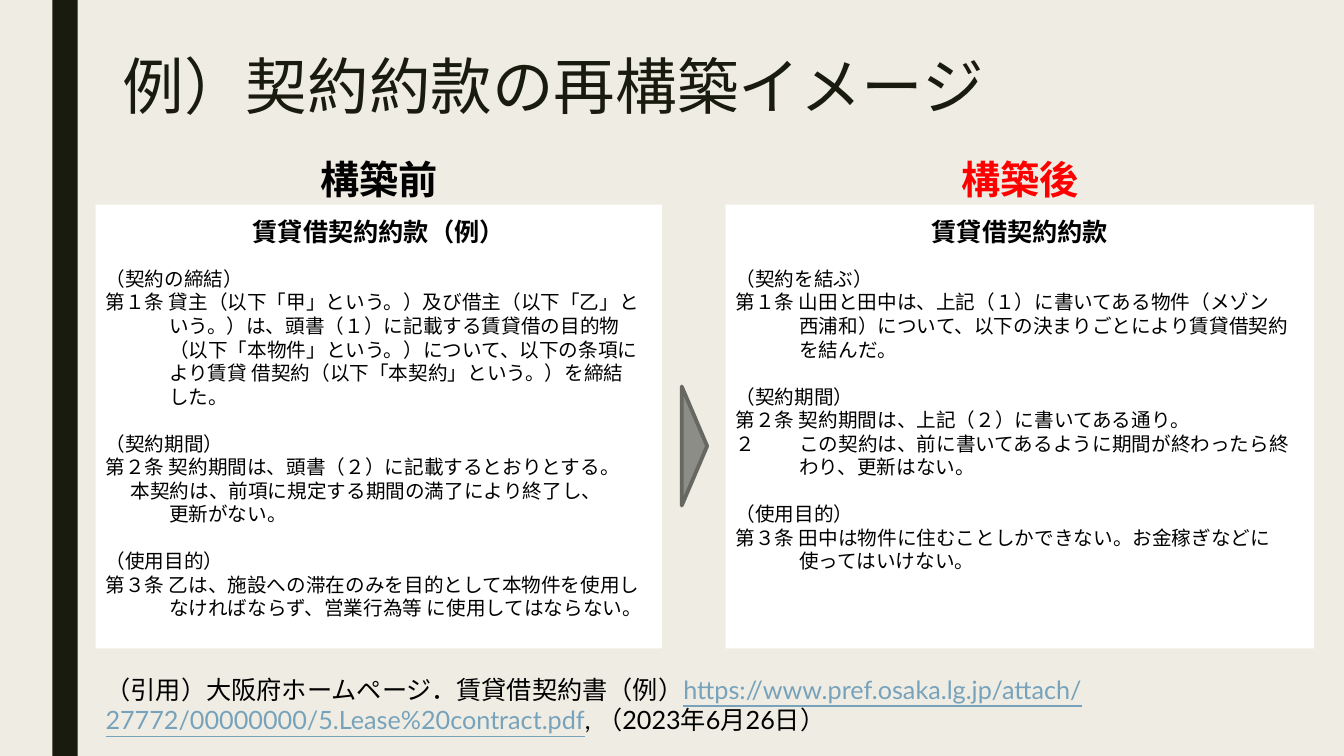
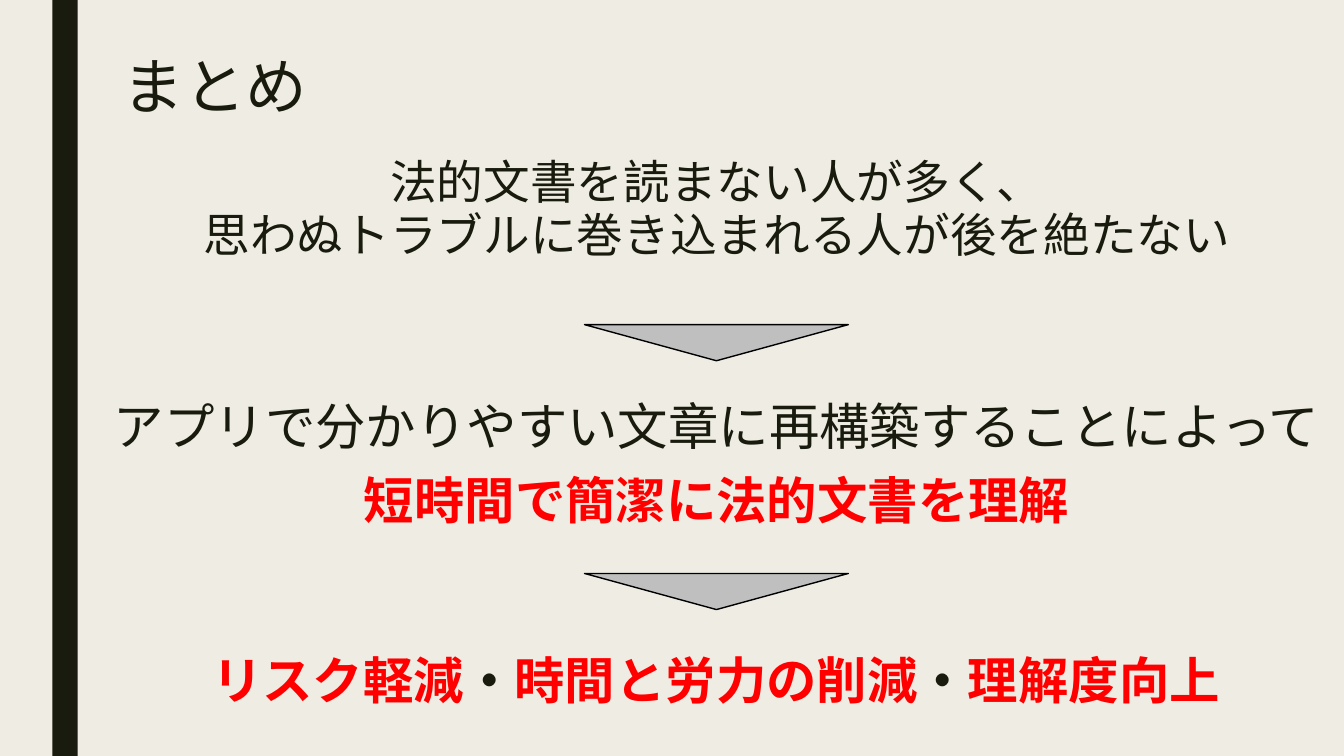
from lxml.etree import SubElement
from pptx import Presentation
from pptx.dml.color import RGBColor
from pptx.enum.shapes import MSO_SHAPE
from pptx.enum.text import MSO_ANCHOR, MSO_AUTO_SIZE, PP_ALIGN
from pptx.oxml.ns import qn
from pptx.util import Cm, Pt

COLOURS = {
    "paper": "EFEDE3", "ink": "191B0E", "black": "000000", "white": "FFFFFF",
    "red": "FF0000", "link": "77A2BB", "grey": "BFBFBF",
    "arrow": "8C8D86", "arrow_edge": "686863",
}
LATO, NOTO = "Lato", "Noto Sans CJK JP"

# Clause kinds: (left margin, first-line indent) in cm
INDENTS = {"heading": (0, 0), "article": (1.6, -1.6), "second": (1.6, -0.97)}

# Each panel: left and width in cm, label, label colour, title, sections
PANELS = [
    (2.41, 14.27, "構築前", "black", "賃貸借契約約款（例）", [
        [("heading", "（契約の締結）"),
         ("article", "第１条 貸主（以下「甲」という。）及び借主（以下「乙」と\n"
                     "いう。）は、頭書（１）に記載する賃貸借の目的物\n"
                     "（以下「本物件」という。）について、以下の条項に\n"
                     "より賃貸 借契約（以下「本契約」という。）を締結\n"
                     "した。")],
        [("heading", "（契約期間）"),
         ("article", "第２条 契約期間は、頭書（２）に記載するとおりとする。"),
         ("second", "本契約は、前項に規定する期間の満了により終了し、\n更新がない。")],
        [("heading", "（使用目的）"),
         ("article", "第３条 乙は、施設への滞在のみを目的として本物件を使用し\n"
                     "なければならず、営業行為等 に使用してはならない。")],
    ]),
    (18.29, 14.83, "構築後", "red", "賃貸借契約約款", [
        [("heading", "（契約を結ぶ）"),
         ("article", "第１条 山田と田中は、上記（１）に書いてある物件（メゾン\n"
                     "西浦和）について、以下の決まりごとにより賃貸借契約\n"
                     "を結んだ。")],
        [("heading", "（契約期間）"),
         ("article", "第２条 契約期間は、上記（２）に書いてある通り。"),
         ("article", "２\tこの契約は、前に書いてあるように期間が終わったら終\n"
                     "わり、更新はない。")],
        [("heading", "（使用目的）"),
         ("article", "第３条 田中は物件に住むことしかできない。お金稼ぎなどに\n"
                     "使ってはいけない。")],
    ]),
]
LABEL_LEFTS = [7.29, 23.44]
CITATION = [
    ("（引用）大阪府ホームページ．賃貸借契約書（例）", "black"),
    ("https://www.pref.osaka.lg.jp/attach/27772/00000000/5.Lease%20contract.pdf", "link"),
    (", （2023年6月26日）", "black"),
]
PROBLEM = "法的文書を読まない人が多く、\n思わぬトラブルに巻き込まれる人が後を絶たない"
SOLUTION = [("アプリで分かりやすい文章に再構築することによって", "ink", False),
            ("短時間で簡潔に法的文書を理解", "red", True)]
BENEFITS = ["リスク軽減", "時間と労力の削減", "理解度向上"]
DOWN_ARROW_TOPS = [8.18, 14.45]


def rgb(name):
    return RGBColor.from_string(COLOURS[name])


def style(para, size, colour, bold=False, font=LATO):
    """Format every run, for Latin and East Asian text alike."""
    for span in para.runs:
        span.font.size, span.font.bold, span.font.name = Pt(size), bold, font
        span.font.color.rgb = rgb(colour)
        SubElement(span.font._element, qn("a:ea"), typeface=font)


def place(shape, left, top, width, height):
    shape.left, shape.top = Cm(left), Cm(top)
    shape.width, shape.height = Cm(width), Cm(height)


def set_indent(para, margin, first_line):
    properties = para._p.get_or_add_pPr()
    properties.set("marL", str(Cm(margin)))
    properties.set("indent", str(Cm(first_line)))


def add_text(slide, left, top, width, height):
    frame = slide.shapes.add_textbox(Cm(left), Cm(top), Cm(width), Cm(height)).text_frame
    frame.word_wrap = True
    return frame


def add_figure(slide, kind, left, top, width, height, fill, line=None, weight=1, rotation=0):
    shape = slide.shapes.add_shape(kind, Cm(left), Cm(top), Cm(width), Cm(height))
    shape.shadow.inherit = False
    shape.rotation = rotation
    shape.fill.solid()
    shape.fill.fore_color.rgb = rgb(fill)
    if line:
        shape.line.color.rgb, shape.line.width = rgb(line), Pt(weight)
    else:
        shape.line.fill.background()
    return shape


def add_page(deck, layout_index, title):
    page = deck.slides.add_slide(deck.slide_layouts[layout_index])
    heading = page.shapes.title
    place(heading, 2.84, 1.3, 26.67, 2.06)
    frame = heading.text_frame
    frame.text = title
    frame.vertical_anchor, frame.auto_size = MSO_ANCHOR.TOP, MSO_AUTO_SIZE.NONE
    para = frame.paragraphs[0]
    para.alignment, para.line_spacing = PP_ALIGN.LEFT, 0.89
    style(para, 44, "ink")
    return page


def set_master(deck, page):
    """Give the slide master the paper background and the dark side band."""
    master = deck.slide_master
    master.background.fill.solid()
    master.background.fill.fore_color.rgb = rgb("paper")
    band = add_figure(page, MSO_SHAPE.RECTANGLE, 1.32, 0, 0.64, 19.05, "ink")
    master.shapes.element.insert(2, band._element)


def add_clauses(frame, title, sections):
    para = frame.paragraphs[0]
    para.text, para.alignment, para.line_spacing = title, PP_ALIGN.CENTER, Pt(21.6)
    style(para, 18, "black", True, NOTO)
    for number, section in enumerate(sections):
        for kind, text in section:
            para = frame.add_paragraph()
            para.text, para.line_spacing = text, Pt(16.8)
            set_indent(para, *INDENTS[kind])
            if kind == "heading":
                para.space_before = Pt(16.8 if number else 14.4)
            style(para, 14, "black", font=NOTO)


def style_statement(para, size, colour, bold=False):
    para.alignment, para.line_spacing = PP_ALIGN.CENTER, 0.94
    para.space_before, para.space_after = Pt(10), Pt(2)
    style(para, size, colour, bold)


def add_spans(para, parts, size, bold=False):
    for text, colour in parts:
        span = para.add_run()
        span.text = text
        span.font.underline = colour == "link"
    style(para, size, "black", bold)
    for span, (_, colour) in zip(para.runs, parts):
        span.font.color.rgb = rgb(colour)


def build_comparison(page):
    for (left, width, label, colour, title, sections), label_left in zip(PANELS, LABEL_LEFTS):
        add_figure(page, MSO_SHAPE.RECTANGLE, left, 5.16, width, 11.18, "white")
        add_clauses(add_text(page, left, 5.33, width, 10.5), title, sections)
        para = add_text(page, label_left, 3.78, 4.52, 1.45).paragraphs[0]
        para.text, para.alignment = label, PP_ALIGN.CENTER
        style(para, 28, colour, True)
    add_figure(page, MSO_SHAPE.ISOSCELES_TRIANGLE, 16, 10.92, 3, 0.64,
               "arrow", "arrow_edge", 2.75, 90)
    add_spans(add_text(page, 2.41, 16.87, 30.35, 1.8).paragraphs[0], CITATION, 18)


def build_summary(page):
    body = page.placeholders[1]
    place(body, 4.45, 3.84, 27.25, 3.45)
    frame = body.text_frame
    frame.text, frame.auto_size = PROBLEM.replace("\n", "\v"), MSO_AUTO_SIZE.NONE
    para = frame.paragraphs[0]
    style_statement(para, 33.3, "ink")
    set_indent(para, 0, 0)
    SubElement(para._p.get_or_add_pPr(), qn("a:buNone"))

    frame = add_text(page, 2.54, 9.96, 31.04, 3.61)
    frame.text = "\n".join(text for text, _, _ in SOLUTION)
    for para, (_, colour, bold) in zip(frame.paragraphs, SOLUTION):
        style_statement(para, 36, colour, bold)

    for top in DOWN_ARROW_TOPS:
        add_figure(page, MSO_SHAPE.ISOSCELES_TRIANGLE, 14.73, top, 6.65, 0.91,
                   "grey", "black", 1, 180)

    parts = [(BENEFITS[0], "red")]
    for benefit in BENEFITS[1:]:
        parts += [("・", "ink"), (benefit, "red")]
    para = add_text(page, 4.39, 16.23, 27.31, 1.8).paragraphs[0]
    para.alignment = PP_ALIGN.CENTER
    add_spans(para, parts, 36, True)


def main():
    deck = Presentation()
    deck.slide_width, deck.slide_height = Cm(33.87), Cm(19.05)
    comparison = add_page(deck, 5, "例）契約約款の再構築イメージ")
    set_master(deck, comparison)
    build_comparison(comparison)
    build_summary(add_page(deck, 1, "まとめ"))
    deck.save("out.pptx")


if __name__ == "__main__":
    main()
